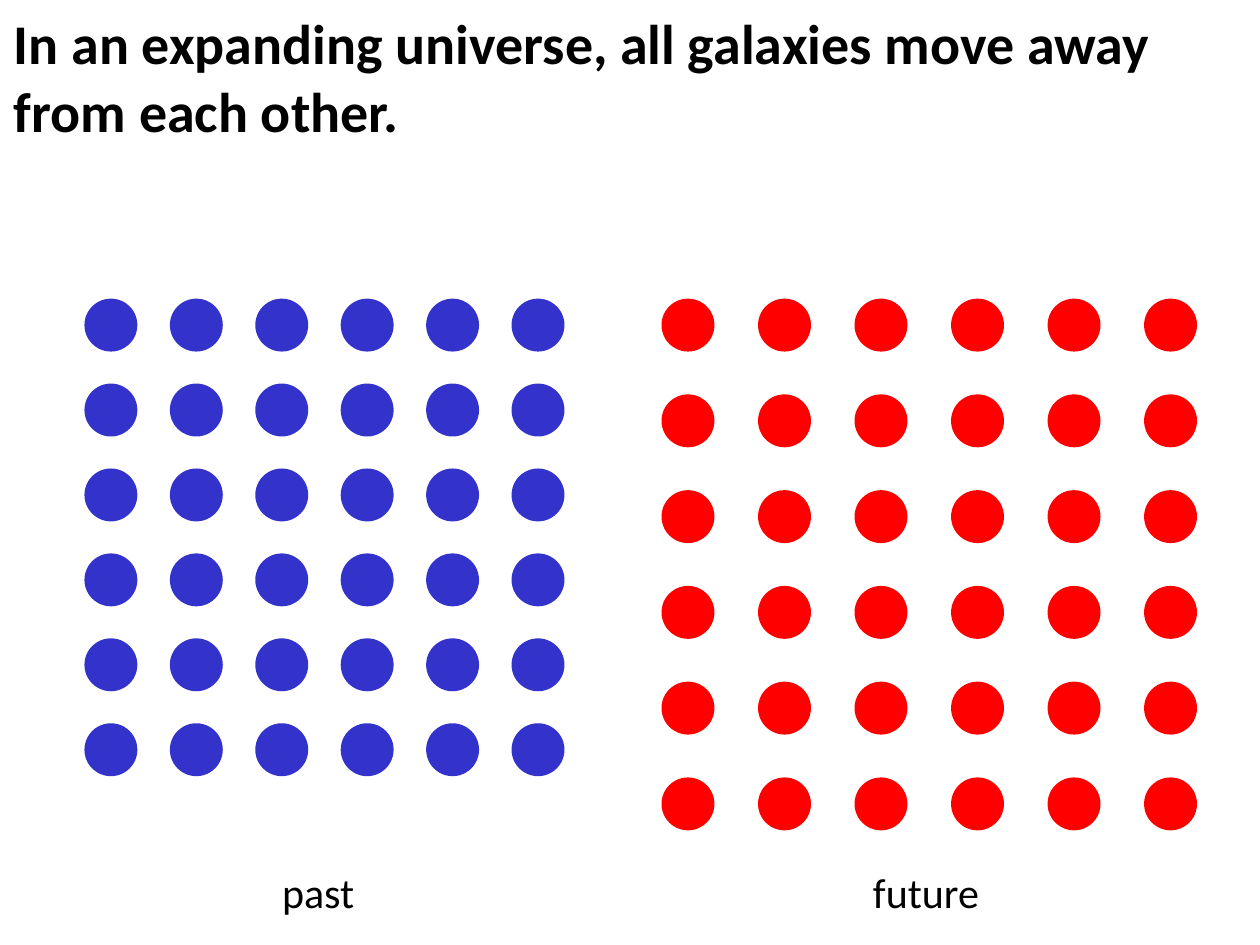
"""Build a slide comparing galaxy spacing in the past and the future."""
from itertools import product

from pptx import Presentation, util as u
from pptx.dml.color import RGBColor
from pptx.enum import shapes, text

COLORS = {"past": "3333CC", "future": "FF0000", "text": "000000"}
COUNT = 6
DIAMETER = 0.42
GRID_TOP = 2.37
LABEL_TOP = 6.83


def format_text(shape, content, size, bold=False):
    frame = shape.text_frame
    frame.text = content
    frame.auto_size = text.MSO_AUTO_SIZE.NONE
    frame.vertical_anchor = text.MSO_ANCHOR.TOP
    paragraph = frame.paragraphs[0]
    paragraph.alignment = text.PP_ALIGN.LEFT
    font = paragraph.runs[0].font
    font.name, font.size, font.bold = "Calibri", u.Pt(size), bold
    font.color.rgb = RGBColor.from_string(COLORS["text"])


presentation = Presentation()
presentation.slide_width, presentation.slide_height = u.Inches(10), u.Inches(7.5)
slide = presentation.slides.add_slide(presentation.slide_layouts[5])

title = slide.shapes.title
title.left, title.top = u.Inches(0.01), u.Inches(0.02)
title.width, title.height = u.Inches(9.98), u.Inches(1.18)
format_text(title, "In an expanding universe, all galaxies move away from each other.", 32, True)

universes = [
    ("past", 0.67, 3.39, 3.37, 2.14, 0.78),
    ("future", 5.25, 3.83, 3.8, 6.83, 1.05),
]
labels = slide.shapes.add_group_shape()
for era, left, span_x, span_y, label_left, label_width in universes:
    galaxies = slide.shapes.add_group_shape()
    for column, row in product(range(COUNT), repeat=2):
        galaxy = galaxies.shapes.add_shape(
            shapes.MSO_SHAPE.OVAL,
            u.Inches(left + column * span_x / (COUNT - 1)),
            u.Inches(GRID_TOP + row * span_y / (COUNT - 1)),
            u.Inches(DIAMETER), u.Inches(DIAMETER))
        galaxy.shadow.inherit = False
        galaxy.fill.solid()
        galaxy.fill.fore_color.rgb = RGBColor.from_string(COLORS[era])
        galaxy.line.fill.background()

    label = labels.shapes.add_textbox(
        u.Inches(label_left), u.Inches(LABEL_TOP), u.Inches(label_width), u.Inches(0.5))
    label.text_frame.word_wrap = False
    format_text(label, era, 24)

presentation.save("out.pptx")
